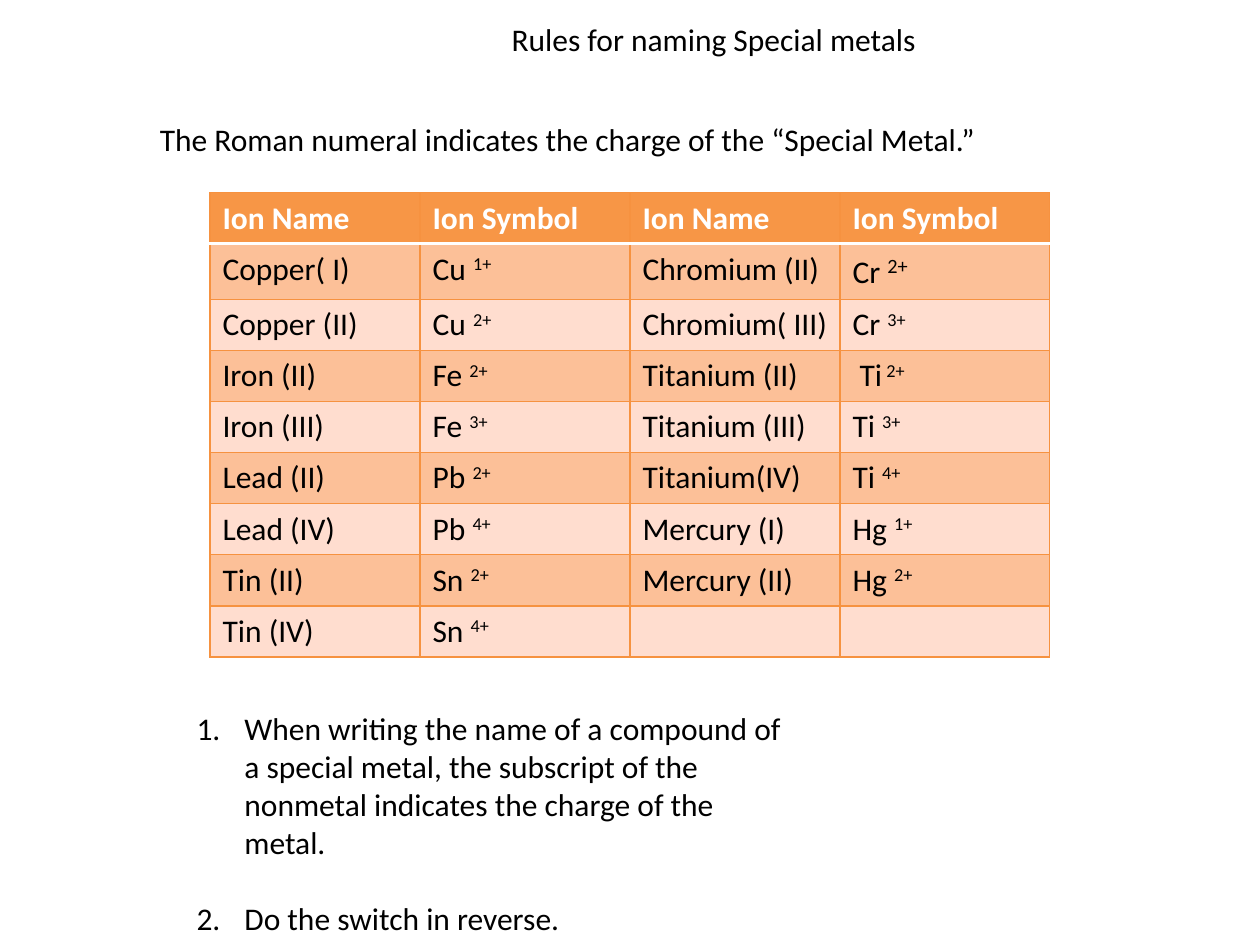
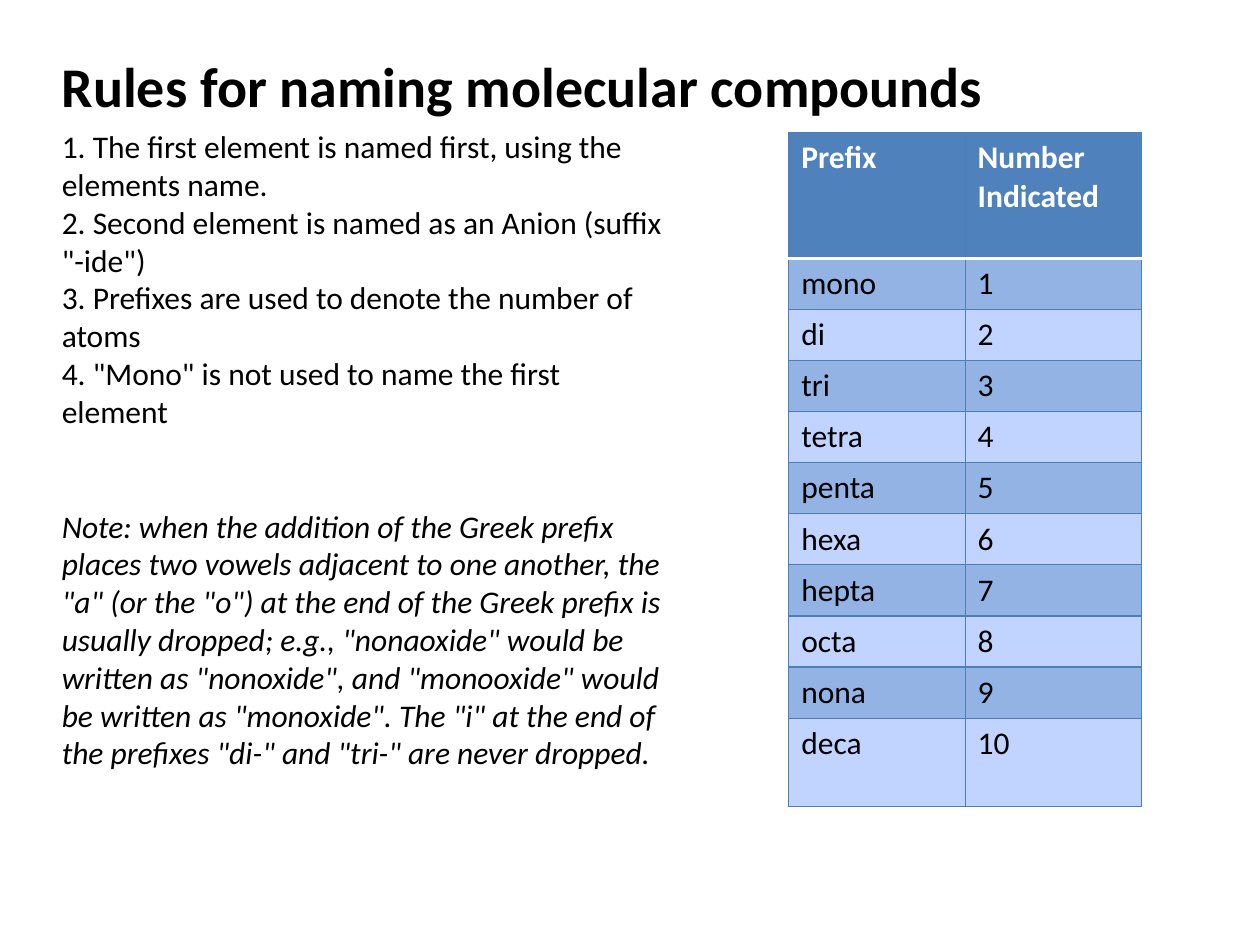
from lxml import etree
from pptx import Presentation
from pptx.dml.color import RGBColor
from pptx.enum.text import MSO_ANCHOR, MSO_AUTO_SIZE, PP_ALIGN
from pptx.oxml.ns import qn
from pptx.util import Inches, Pt

TOP, LEFT = MSO_ANCHOR.TOP, PP_ALIGN.LEFT
FIXED = MSO_AUTO_SIZE.NONE
FONT, SIZE = "Calibri", 18
BLACK, WHITE = "000000", "FFFFFF"
ORANGE = {"head": "F79646", "bands": ("FCC098", "FFDDCF"), "line": "F69240"}
BLUE = {"head": "4F81BD", "bands": ("93B3E5", "C0D4FF"), "line": "4B7EBC"}
WIDE, HIGH = 10, 7.5
ROW = 0.405
LAYOUT = 1

METALS = "Rules for naming Special metals"
CHARGE = "The Roman numeral indicates the charge of the “Special Metal.”"
IONS = [
    ("Ion Name", "Ion Symbol", "Ion Name", "Ion Symbol"),
    ("Copper( I)", "Cu |1+", "Chromium (II)", "Cr |2+"),
    ("Copper (II)", "Cu |2+", "Chromium( III)", "Cr |3+"),
    ("Iron (II)", "Fe |2+", "Titanium (II)", " Ti| 2+"),
    ("Iron (III)", "Fe |3+", "Titanium (III)", "Ti |3+"),
    ("Lead (II)", "Pb |2+", "Titanium(IV)", "Ti |4+"),
    ("Lead (IV)", "Pb |4+", "Mercury (I)", "Hg |1+"),
    ("Tin (II)", "Sn |2+", "Mercury (II)", "Hg |2+"),
    ("Tin (IV)", "Sn |4+", "", ""),
]
STEPS = [
    "When writing the name of a compound of a special metal, the subscript "
    "of the nonmetal indicates the charge of the metal.",
    "Do the switch in reverse.",
]

COMPOUNDS = "Rules for naming molecular compounds"
RULES = [
    "1. The first element is named first, using the elements name.",
    "2. Second element is named as an Anion (suffix \"-ide\")",
    "3. Prefixes are used to denote the number of atoms",
    "4. \"Mono\" is not used to name the first element",
]
NOTE = (
    "Note: when the addition of the Greek prefix places two vowels adjacent "
    "to one another, the \"a\" (or the \"o\") at the end of the Greek prefix is "
    "usually dropped; e.g., \"nonaoxide\" would be written as \"nonoxide\", and "
    "\"monooxide\" would be written as \"monoxide\". The \"i\" at the end of the "
    "prefixes \"di-\" and \"tri-\" are never dropped."
)
NAMES = ["mono", "di", "tri", "tetra", "penta", "hexa", "hepta", "octa", "nona", "deca"]
COUNTS = [("Prefix", "Number Indicated")]
COUNTS += [(name, str(i)) for i, name in enumerate(NAMES, 1)]


def color(code):
    return RGBColor.from_string(code)


def style(para, size=SIZE, hue=BLACK, bold=False, slant=False):
    for run in para.runs:
        font = run.font
        font.name, font.size = FONT, Pt(size)
        font.bold, font.italic = bold, slant
        font.color.rgb = color(hue)


def place(shape, box):
    shape.left, shape.top, shape.width, shape.height = map(Inches, box)
    frame = shape.text_frame
    frame.auto_size, frame.word_wrap = FIXED, True
    frame.vertical_anchor = TOP
    return frame


def write(shape, box, lines, **look):
    frame = place(shape, box)
    frame.text = "\n".join(lines)
    for para in frame.paragraphs:
        para.alignment = LEFT
        para.space_before = Pt(0)
        style(para, **look)
    return frame.paragraphs


def indent(para, inset, kind, **attrs):
    props = para._p.get_or_add_pPr()
    props.set("marL", str(Inches(inset)))
    props.set("indent", str(-Inches(inset)))
    etree.SubElement(props, qn(kind), attrs)


def edge(cell, side, hue, width):
    line = etree.SubElement(cell._tc.get_or_add_tcPr(), qn("a:ln" + side), w=str(Pt(width)))
    fill = etree.SubElement(line, qn("a:solidFill"))
    etree.SubElement(fill, qn("a:srgbClr"), val=hue)


def paint(cell, row, theme):
    for side in "LRTB":
        split = (row, side) in ((0, "B"), (1, "T"))
        edge(cell, side, WHITE if split else theme["line"], 2 if split else 0.75)
    cell.fill.solid()
    cell.fill.fore_color.rgb = color(theme["bands"][(row - 1) % 2] if row else theme["head"])


def fill(cell, text, row):
    para = cell.text_frame.paragraphs[0]
    base, *power = text.split("|")
    para.text = base
    for part in power:
        para.add_run().text = part
    style(para, hue=BLACK if row else WHITE, bold=not row)
    for run in para.runs[1:]:
        run.font._element.set("baseline", "30000")


def grid(slide, data, left, top, col, theme, tall):
    rows, cols = len(data), len(data[0])
    highs = [tall.get(i, ROW) for i in range(rows)]
    box = map(Inches, (left, top, col * cols, sum(highs)))
    table = slide.shapes.add_table(rows, cols, *box).table
    for column in table.columns:
        column.width = Inches(col)
    for i, texts in enumerate(data):
        table.rows[i].height = Inches(highs[i])
        for j, text in enumerate(texts):
            cell = table.cell(i, j)
            paint(cell, i, theme)
            fill(cell, text, i)
    return table


def start(deck, title, box, **look):
    slide = deck.slides.add_slide(deck.slide_layouts[LAYOUT])
    write(slide.shapes.title, box, [title], **look)
    return slide, slide.placeholders[1]


def metals(deck):
    slide, body = start(deck, METALS, (3.96, 0.11, 3.6, 0.4))
    write(slide.shapes.add_textbox(0, 0, 0, 0), (1.17, 0.9, 7.16, 0.4), [CHARGE])
    col = WIDE / 6
    table = grid(slide, IONS, col, 1.53, col, ORANGE, {1: 0.44})
    table.cell(1, 3).text_frame.paragraphs[0].runs[1].font.size = Pt(20)
    paras = write(body, (1.46, 5.58, WIDE / 2, 1.62), STEPS)
    for para in paras:
        indent(para, 0.38, "a:buAutoNum", type="arabicPeriod")
    paras[1].space_before = Pt(22)


def compounds(deck):
    slide, body = start(deck, COMPOUNDS, (0.39, 0.36, 7.8, 0.64), size=32, bold=True)
    paras = write(body, (0.39, 0.96, WIDE / 2, 5.55), RULES + [NOTE])
    for para in paras:
        indent(para, 0, "a:buNone")
    style(paras[-1], slant=True)
    paras[-1].space_before = Pt(44)
    last = len(COUNTS) - 1
    grid(slide, COUNTS, 6.26, 1.05, 1.4, BLUE, {0: 1, last: 0.7})


def main():
    deck = Presentation()
    deck.slide_width, deck.slide_height = Inches(WIDE), Inches(HIGH)
    metals(deck)
    compounds(deck)
    deck.save("out.pptx")


if __name__ == "__main__":
    main()
